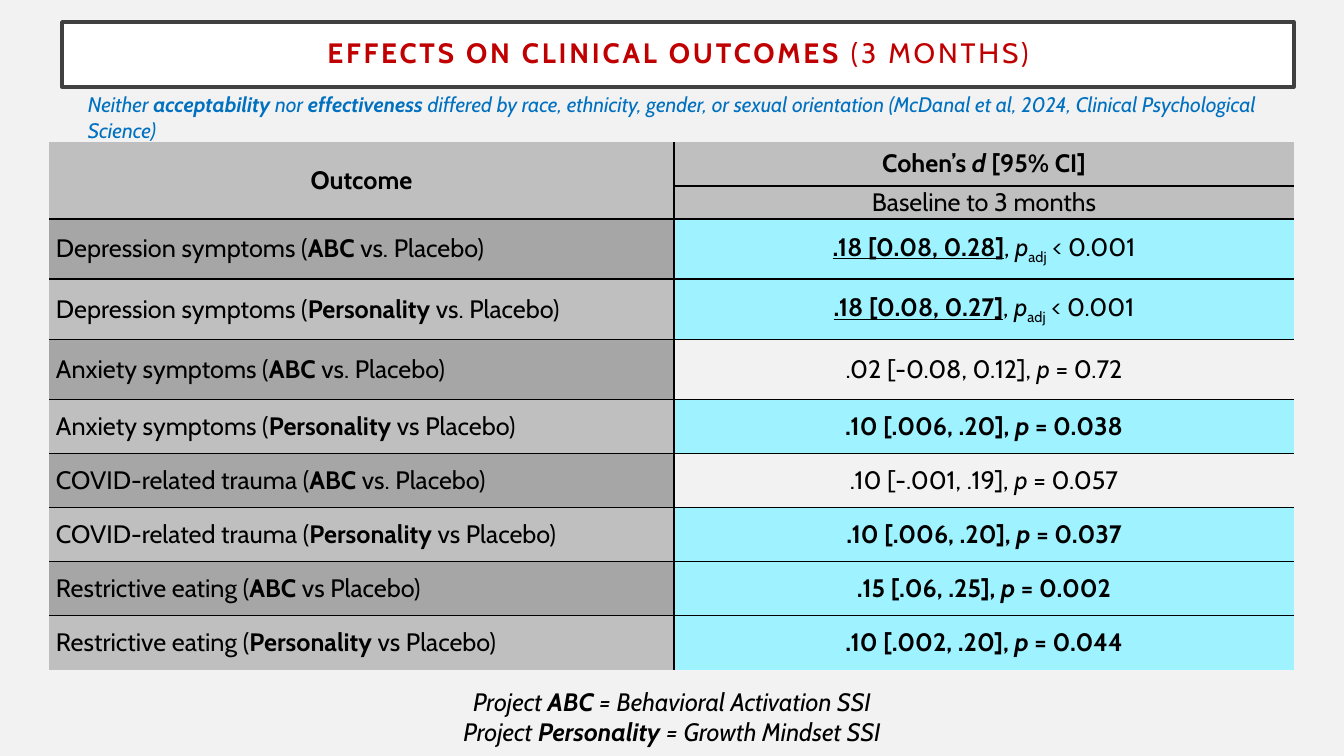
"""Build the slide on clinical outcomes at three months."""
from lxml import etree
from pptx import Presentation
from pptx import util as u
from pptx.dml.color import RGBColor
from pptx.enum import shapes, text
from pptx.oxml.ns import qn

FONT = "Cabin"
COLORS = {
    "bg": "F2F2F2", "white": "FFFFFF", "frame": "404040", "title": "C00000",
    "note": "0070C0", "ink": "000000", "light": "BFBFBF", "dark": "A6A6A6",
    "effect": "9FF2FF",
}

# Run styles: b bold, i italic, u underline, s subscript
TITLE = [("EFFECTS ON CLINICAL OUTCOMES ", "b"), ("(3 MONTHS)", "")]
NOTE = [
    ("Neither ", "i"), ("acceptability ", "bi"), ("nor ", "i"), ("effectiveness ", "bi"),
    ("differed by race, ethnicity, gender, or sexual orientation "
     "(McDanal et al, 2024, Clinical Psychological Science)", "i"),
]
KEY = [
    [("Project", "i"), (" ABC", "bi"), (" = Behavioral Activation SSI", "i")],
    [("Project", "i"), (" Personality", "bi"), (" = Growth Mindset SSI", "i")],
]
HEAD_LEFT = [("Outcome", "b")]
HEAD_RIGHT = [("Cohen’s ", "b"), ("d", "bi"), (" [95% CI]", "b")]
SUBHEAD = [("Baseline to 3 months", "")]
ADJUSTED = [(", ", ""), ("p", "i"), ("adj", "s"), (" < 0.001", "")]
OUTCOMES = [
    ("Depression symptoms", "ABC", "vs.", [(".18 [0.08, 0.28]", "bu")] + ADJUSTED, "effect"),
    ("Depression symptoms", "Personality", "vs.", [(".18 [0.08, 0.27]", "bu")] + ADJUSTED, "effect"),
    ("Anxiety symptoms", "ABC", "vs.", [(".02 [-0.08, 0.12], ", ""), ("p", "i"), (" = 0.72", "")], "bg"),
    ("Anxiety symptoms", "Personality", "vs", [(".10 [.006, .20], ", "b"), ("p", "bi"), (" = 0.038", "b")], "effect"),
    ("COVID-related trauma", "ABC", "vs.", [(".10 [-.001, .19], ", ""), ("p", "i"), (" = 0.057", "")], "bg"),
    ("COVID-related trauma", "Personality", "vs", [(".10 [.006, .20], ", "b"), ("p", "bi"), (" = 0.037", "b")], "effect"),
    ("Restrictive eating", "ABC", "vs", [(".15 [.06, .25], ", "b"), ("p ", "bi"), ("= 0.002", "b")], "effect"),
    ("Restrictive eating", "Personality", "vs", [(".10 [.002, .20], ", "b"), ("p ", "bi"), ("= 0.044", "b")], "effect"),
]
COLS = [625, 620]
ROWS = [44, 33, 60, 61, 60] + [54] * 5
CENTER, LEFT = text.PP_ALIGN.CENTER, text.PP_ALIGN.LEFT


def px(n):
    return u.Emu(round(n * 914400 / 100.8))


def rgb(name):
    return RGBColor.from_string(COLORS[name])


def add_runs(p, runs, size, color, align, spacing=None):
    p.alignment = align
    for words, style in runs:
        r = p.add_run()
        r.text = words
        f = r.font
        f.name, f.size = FONT, u.Pt(size)
        f.color.rgb = rgb(color)
        f.bold, f.italic, f.underline = "b" in style, "i" in style, "u" in style
        if "s" in style:
            r._r.get_or_add_rPr().set("baseline", "-25000")
        if spacing:
            r._r.get_or_add_rPr().set("spc", str(spacing))


def add_text(s, box, paragraphs, size, color, align):
    tf = s.shapes.add_textbox(*map(px, box)).text_frame
    tf.word_wrap = True
    for i, runs in enumerate(paragraphs):
        p = tf.add_paragraph() if i else tf.paragraphs[0]
        add_runs(p, runs, size, color, align)


def set_borders(cell, inner):
    tc_pr = cell._tc.get_or_add_tcPr()
    for side in ("L", "R", "T", "B"):
        ln = etree.SubElement(tc_pr, qn("a:ln" + side), w=str(u.Pt(1)))
        if side in inner:
            fill = etree.SubElement(ln, qn("a:solidFill"))
            etree.SubElement(fill, qn("a:srgbClr"), val=COLORS["ink"])
        else:
            etree.SubElement(ln, qn("a:noFill"))


def add_title(s):
    sp = s.shapes.add_shape(shapes.MSO_SHAPE.RECTANGLE, *map(px, (62, 22, 1232, 65)))
    sp.shadow.inherit = False
    sp.fill.solid()
    sp.fill.fore_color.rgb = rgb("white")
    sp.line.color.rgb = rgb("frame")
    sp.line.width = u.Pt(2.5)
    tf = sp.text_frame
    tf.word_wrap = True
    tf.vertical_anchor = text.MSO_ANCHOR.MIDDLE
    tf.margin_left = tf.margin_right = tf.margin_top = tf.margin_bottom = px(20)
    tf.paragraphs[0].line_spacing = 0.9
    add_runs(tf.paragraphs[0], TITLE, 20, "title", CENTER, 200)


def add_outcomes(s):
    grid = [[(HEAD_LEFT, "light"), (HEAD_RIGHT, "light")], [([], "light"), (SUBHEAD, "light")]]
    for i, (symptom, project, versus, effect, fill) in enumerate(OUTCOMES):
        label = [(symptom + " (", ""), (project, "b"), (f" {versus} Placebo)", "")]
        grid.append([(label, "light" if i % 2 else "dark"), (effect, fill)])
    box = (49, 142, sum(COLS), sum(ROWS))
    table = s.shapes.add_table(len(ROWS), len(COLS), *map(px, box)).table
    for col, width in zip(table.columns, COLS):
        col.width = px(width)
    for row, height in zip(table.rows, ROWS):
        row.height = px(height)
    for i, line in enumerate(grid):
        for j, (runs, fill) in enumerate(line):
            cell = table.cell(i, j)
            inner = "L" if j else "R"
            inner += ("T" if i else "") + ("B" if i < len(grid) - 1 else "")
            set_borders(cell, inner)
            cell.fill.solid()
            cell.fill.fore_color.rgb = rgb(fill)
            cell.vertical_anchor = text.MSO_ANCHOR.MIDDLE
            cell.margin_left = cell.margin_right = px(7)
            cell.margin_top = cell.margin_bottom = 0
            align = LEFT if j == 0 and i > 1 else CENTER
            add_runs(cell.text_frame.paragraphs[0], runs, 18, "ink", align)
    table.cell(0, 0).merge(table.cell(1, 0))


def main():
    prs = Presentation()
    prs.slide_width, prs.slide_height = px(1344), px(756)
    s = prs.slides.add_slide(prs.slide_layouts[6])
    s.background.fill.solid()
    s.background.fill.fore_color.rgb = rgb("bg")
    add_outcomes(s)
    add_title(s)
    add_text(s, (448, 681, 448, 75), KEY, 18, "ink", CENTER)
    add_text(s, (78, 87, 1216, 35), [NOTE], 15, "note", LEFT)
    prs.save("out.pptx")


if __name__ == "__main__":
    main()
